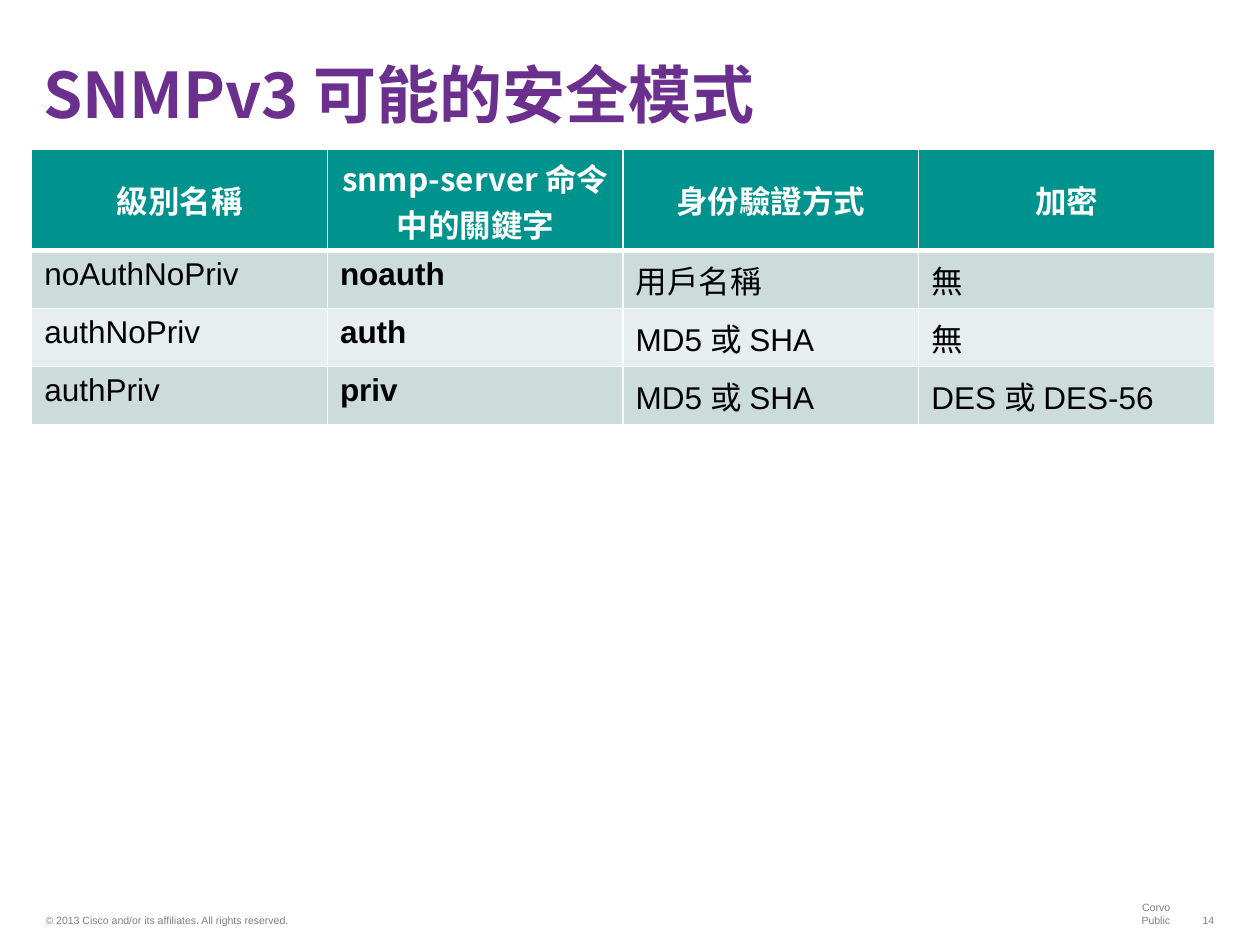
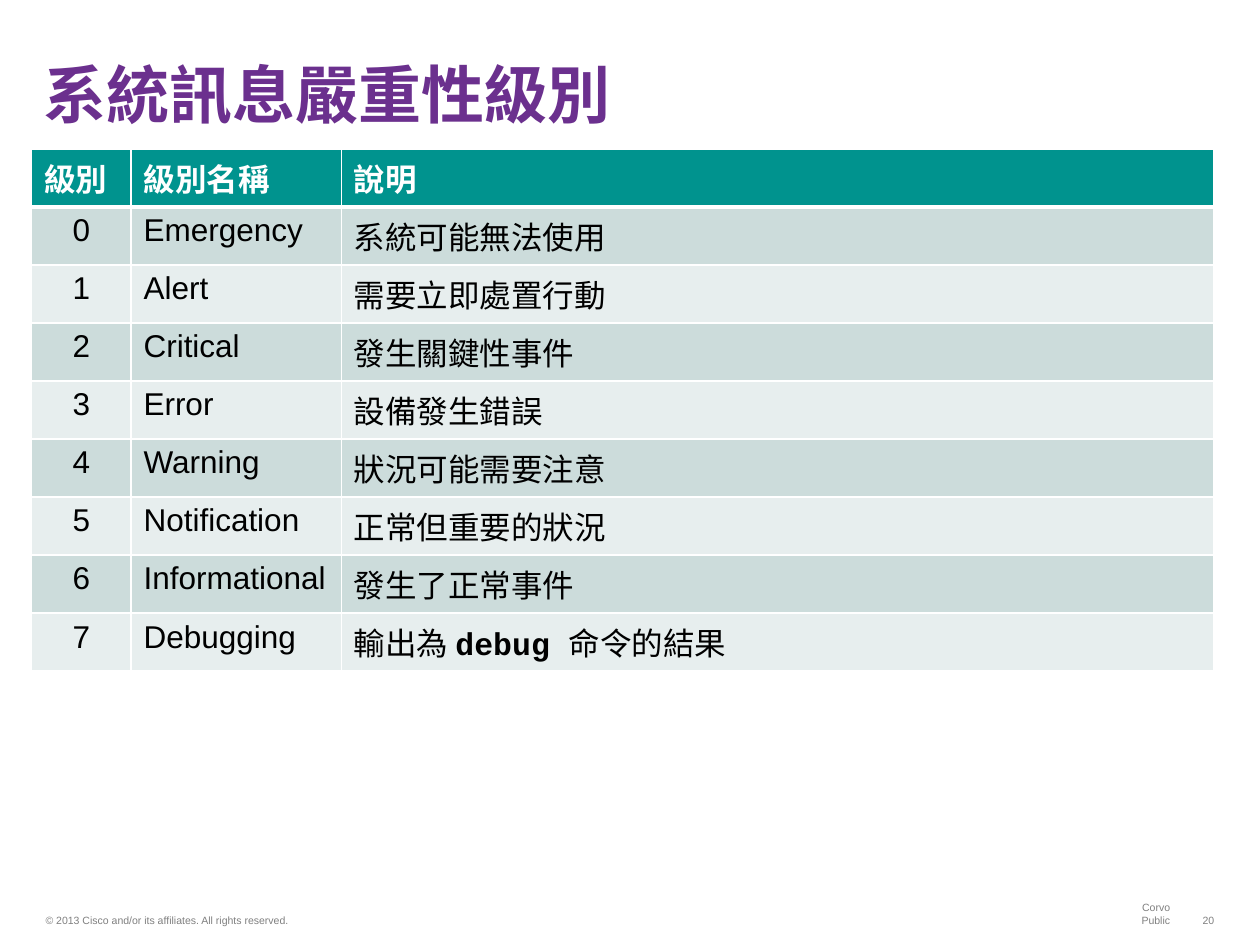
"""Build two table slides: SNMPv3 security modes and system message severity levels."""
from lxml import etree
from pptx import Presentation
from pptx.dml.color import RGBColor
from pptx.enum import text as t
from pptx.oxml import ns
from pptx.util import Cm, Pt

PURPLE = RGBColor(0x6B, 0x30, 0x8E)
TEAL = RGBColor(0x00, 0x93, 0x8E)
BANDS = RGBColor(0xCC, 0xDC, 0xDB), RGBColor(0xE7, 0xEE, 0xEE)
GRAY = RGBColor(0x80, 0x80, 0x80)
WHITE = RGBColor(0xFF, 0xFF, 0xFF)
BLACK = RGBColor(0x00, 0x00, 0x00)
SANS, CJK, MONO = "Arial", "Noto Sans CJK SC", "Courier New"
LEFT, MID, RIGHT = t.PP_ALIGN.LEFT, t.PP_ALIGN.CENTER, t.PP_ALIGN.RIGHT

TITLE = {"name": CJK, "size": Pt(36), "bold": True}
FOOT = {"name": SANS, "size": Pt(6), "bold": False}
HEAD = {"name": CJK, "size": Pt(18), "bold": True}
BODY = {"name": SANS, "size": Pt(18), "bold": False}
CODE = {"name": MONO, "bold": True}

PAGES = [
    {
        "title": "SNMPv3 可能的安全模式", "page": "14",
        "align": MID, "anchor": t.MSO_ANCHOR.MIDDLE, "top": 2.05,
        "cols": [(5.96, LEFT, {}), (5.96, LEFT, {"bold": True}),
                 (5.96, LEFT, {}), (5.96, LEFT, {})],
        "rows": [
            ("級別名稱", "snmp-server 命令中的關鍵字", "身份驗證方式", "加密"),
            ("noAuthNoPriv", "noauth", "用戶名稱", "無"),
            ("authNoPriv", "auth", "MD5 或 SHA", "無"),
            ("authPriv", "priv", "MD5 或 SHA", "DES 或 DES-56"),
        ],
    },
    {
        "title": "系統訊息嚴重性級別", "page": "20",
        "align": LEFT, "anchor": t.MSO_ANCHOR.TOP, "top": 1.17,
        "cols": [(2, MID, {}), (4.24, LEFT, {}), (17.58, LEFT, {"name": CJK})],
        "rows": [
            ("級別", "級別名稱", "說明"),
            ("0", "Emergency", "系統可能無法使用"),
            ("1", "Alert", "需要立即處置行動"),
            ("2", "Critical", "發生關鍵性事件"),
            ("3", "Error", "設備發生錯誤"),
            ("4", "Warning", "狀況可能需要注意"),
            ("5", "Notification", "正常但重要的狀況"),
            ("6", "Informational", "發生了正常事件"),
            ("7", "Debugging", ("輸出為 ", "debug ", "命令的結果")),
        ],
    },
]


def write(par, words, look, color, align=LEFT):
    par.alignment = align
    parts = (words,) if isinstance(words, str) else words
    for i, part in enumerate(parts):
        run = par.add_run()
        run.text = part
        for key, val in (look | CODE if i % 2 else look).items():
            setattr(run.font, key, val)
        run.font.color.rgb = color
        etree.SubElement(run.font._element, ns.qn("a:ea"), typeface=CJK)


def edge(cell, sides):
    props = cell._tc.get_or_add_tcPr()
    for i, (side, width) in enumerate(sides.items()):
        line = etree.Element(ns.qn("a:ln" + side), w=str(Pt(width)))
        fill = etree.SubElement(line, ns.qn("a:solidFill"))
        etree.SubElement(fill, ns.qn("a:srgbClr"), val=str(WHITE))
        props.insert(i, line)


deck = Presentation()
deck.slide_width, deck.slide_height = Cm(25.4), Cm(19.05)

for page in PAGES:
    slide = deck.slides.add_slide(deck.slide_layouts[6])
    boxes = [
        ("© 2013 Cisco and/or its affiliates. All rights reserved.",
         (0.69, 18.29, 9.5, 0.48), FOOT, GRAY, LEFT, True, 0.1),
        ("Corvo Public", (22.17, 18.29, 1.65, 0.48), FOOT, GRAY, RIGHT, False, 0.1),
        (page["page"], (24, 18.29, 0.71, 0.48), FOOT, GRAY, RIGHT, False, 0.1),
        (page["title"], (0.64, 0.43, 23.85, 2.34), TITLE, PURPLE, LEFT, True, 0.13),
    ]
    for words, place, look, color, align, wrap, pad in boxes:
        frame = slide.shapes.add_textbox(*map(Cm, place)).text_frame
        form = {"word_wrap": wrap, "vertical_anchor": t.MSO_ANCHOR.BOTTOM,
                "margin_left": Cm(0.23), "margin_right": Cm(0.23),
                "margin_top": Cm(pad), "margin_bottom": Cm(pad)}
        for key, val in form.items():
            setattr(frame, key, val)
        if look is TITLE:
            frame.paragraphs[0].line_spacing = 0.8
        write(frame.paragraphs[0], words, look, color, align)

    rows, cols = page["rows"], page["cols"]
    tall = page["top"] + 1.17 * (len(rows) - 1)
    grid = slide.shapes.add_table(len(rows), len(cols), Cm(0.64), Cm(3),
                                  Cm(23.83), Cm(tall)).table
    for c, (wide, align, extra) in enumerate(cols):
        grid.columns[c].width = Cm(wide)
    for r, row in enumerate(rows):
        grid.rows[r].height = Cm(1.17 if r else page["top"])
        for c, words in enumerate(row):
            cell = grid.cell(r, c)
            cell.fill.solid()
            par = cell.text_frame.paragraphs[0]
            if r:
                wide, align, extra = cols[c]
                cell.fill.fore_color.rgb = BANDS[(r - 1) % 2]
                write(par, words, BODY | extra, BLACK, align)
            else:
                cell.fill.fore_color.rgb = TEAL
                cell.vertical_anchor = page["anchor"]
                write(par, words, HEAD, WHITE, page["align"])
            edge(cell, {"L": 1, "R": 1, "T": 3 if r == 1 else 1, "B": 1 if r else 3})

deck.save("out.pptx")
